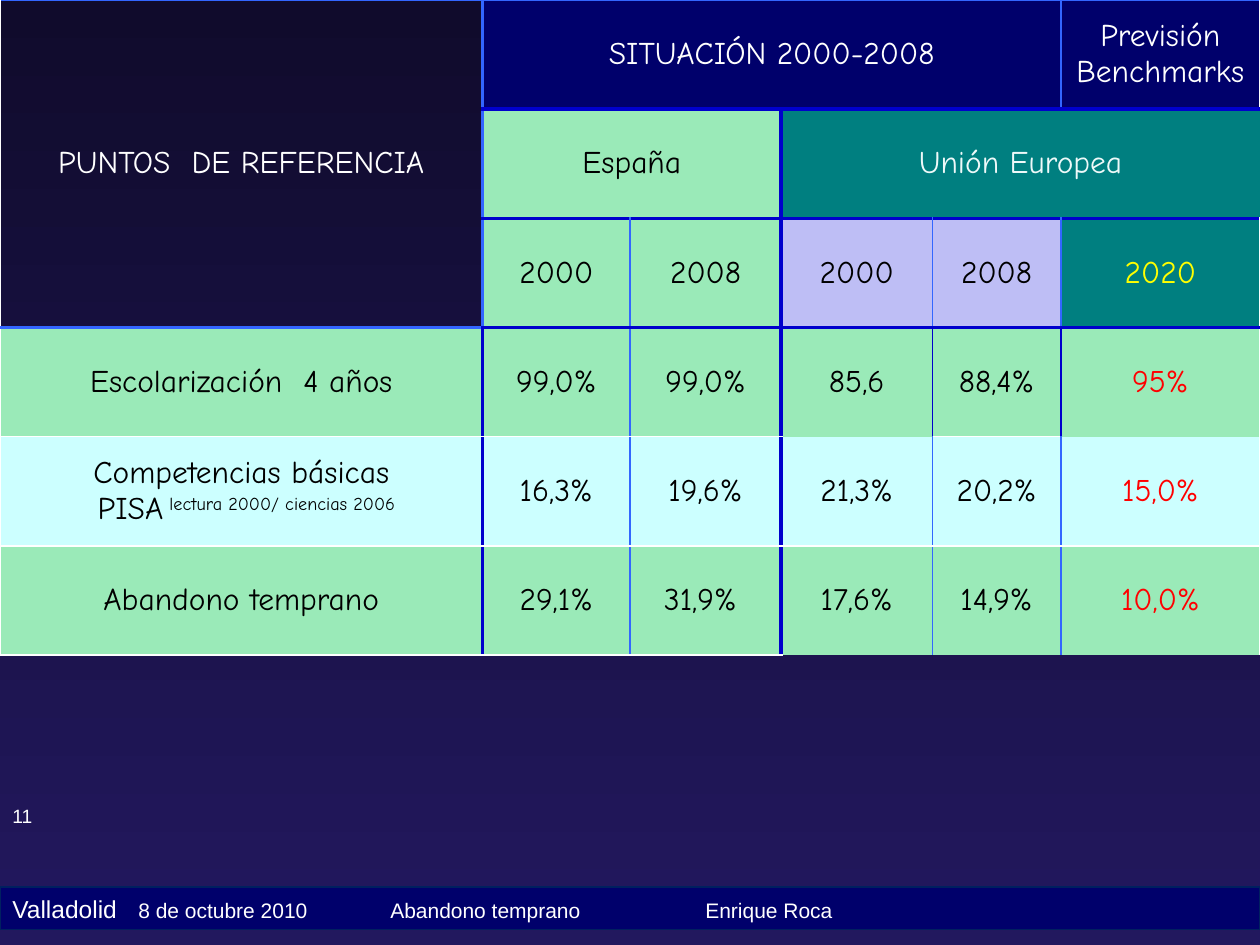
from lxml import etree
from pptx import Presentation, util as u
from pptx.dml.color import RGBColor
from pptx.enum import shapes, text
from pptx.oxml.ns import qn

NAVY, BLUE, SKY, WHITE, BLACK = "00006B", "0000CC", "3366FF", "FFFFFF", "000000"
GREEN, TEAL, LILAC, AQUA, RED = "9AEAB8", "007F80", "BEBEF5", "CCFFFF", "FF0000"


def color(value):
    return RGBColor.from_string(value)


def write(paragraph, words, size=18, font="Comic Neue", fill=WHITE, raised=False):
    run = paragraph.add_run()
    run.text = words
    run.font.size, run.font.name = u.Pt(size), font
    run.font.color.rgb = color(fill)
    if raised:
        run._r.get_or_add_rPr().set("baseline", "30000")


prs = Presentation()
prs.slide_width, prs.slide_height = u.Inches(10), u.Inches(7.5)
slide = prs.slides.add_slide(prs.slide_layouts[6])

# Background
backdrop = slide.background.fill
backdrop.gradient()
backdrop.gradient_angle = 270
for stop, shade in zip(backdrop.gradient_stops, ("100B2C", "22185E")):
    stop.color.rgb = color(shade)

# Page number
page = slide.shapes.add_textbox(u.Inches(0), u.Inches(6.33), u.Inches(0.47), u.Inches(0.29))
page.text_frame.word_wrap = True
write(page.text_frame.paragraphs[0], "11", size=11, font="Arial")

# Footer band
footer = slide.shapes.add_shape(shapes.MSO_SHAPE.RECTANGLE, u.Inches(0), u.Inches(7.04),
                                u.Inches(10), u.Inches(0.34))
footer.shadow.inherit = False
footer.fill.solid()
footer.fill.fore_color.rgb = color(NAVY)
footer.line.color.rgb = color("002060")
footer.line.width = u.Pt(0.75)
footer_line = footer.text_frame.paragraphs[0]
footer_line.alignment = text.PP_ALIGN.LEFT
write(footer_line, "Valladolid\t", size=14, font="Arial")
write(footer_line, "8 de octubre 2010 \t\tAbandono temprano \t\tEnrique Roca", size=12, font="Arial")

# Table contents: (row, column): (text, fill, text colour, rows spanned, columns spanned)
contents = {
    (0, 0): ("PUNTOS  DE REFERENCIA", None, WHITE, 3, 1),
    (0, 1): ("SITUACIÓN 2000-2008", NAVY, WHITE, 1, 4),
    (0, 5): ("Previsión\nBenchmarks", NAVY, WHITE, 1, 1),
    (1, 1): ("España", GREEN, BLACK, 1, 2),
    (1, 3): ("Unión Europea", TEAL, "EEF9F9", 1, 3),
}
years = zip(("2000", "2008", "2000", "2008", "2020"), (GREEN, GREEN, LILAC, LILAC, TEAL))
for col, (year, fill) in enumerate(years, 1):
    contents[2, col] = (year, fill, "FFFF00" if col == 5 else BLACK, 1, 1)
indicators = [
    (GREEN, "Escolarización  4 años", "99,0%", "99,0%", "85,6", "88,4%", "95%"),
    (AQUA, "Competencias básicas\n PISA", "16,3%", "19,6%", "21,3%", "20,2%", "15,0%"),
    (GREEN, "Abandono temprano", "29,1%", "31,9% ", "17,6%", "14,9%", "10,0%"),
]
for row, (fill, *values) in enumerate(indicators, 3):
    for col, value in enumerate(values):
        contents[row, col] = (value, fill, RED if col == 5 else BLACK, 1, 1)

# Rules: upright[row, column edge] and level[row edge, column] give colour and width
upright, level = {}, {}
for row in range(6):
    upright[row, 0] = upright[row, 6] = (WHITE, 1)
    upright[row, 1] = (SKY, 1.5) if row < 3 else (BLUE, 2.25)
    if row > 0:
        upright[row, 3] = (BLUE, 2.25)
    if row > 1:
        upright[row, 2] = (SKY, 1)
        upright[row, 4] = (BLUE, 1) if row == 3 else (SKY, 1)
    if row != 1:
        upright[row, 5] = (BLUE, 1) if row == 3 else (SKY, 1.5)
for col in range(6):
    level[0, col] = (SKY, 1.5)
    level[3, col] = (BLUE, 2.25) if col else (SKY, 1.5)
    level[5, col] = (WHITE, 1)
    if col > 0:
        level[1, col] = level[2, col] = (BLUE, 2.25)
    if col not in (3, 5):
        level[4, col] = (WHITE, 1)
    if col < 3:
        level[6, col] = (WHITE, 1)

# Table
table = slide.shapes.add_table(6, 6, u.Inches(0), u.Inches(0), u.Inches(10), u.Inches(5.2)).table
table.first_row = table.horz_banding = False
for column, width in zip(table.columns, (3.83, 1.17, 1.2, 1.2, 1.02, 1.58)):
    column.width = u.Inches(width)
for table_row in table.rows:
    table_row.height = u.Inches(5.2 / 6)

# Borders go before the fill in each cell
for row in range(6):
    for col in range(6):
        cell = table.cell(row, col)
        cell_format = cell._tc.get_or_add_tcPr()
        sides = {"a:lnL": upright.get((row, col)), "a:lnR": upright.get((row, col + 1)),
                 "a:lnT": level.get((row, col)), "a:lnB": level.get((row + 1, col))}
        for side, rule in sides.items():
            line = etree.SubElement(cell_format, qn(side))
            if rule:
                line.set("w", str(u.Pt(rule[1])))
                solid = etree.SubElement(line, qn("a:solidFill"))
                etree.SubElement(solid, qn("a:srgbClr")).set("val", rule[0])
            else:
                etree.SubElement(line, qn("a:noFill"))
        cell.fill.background()

for (row, col), (words, fill, ink, tall, wide) in contents.items():
    cell = table.cell(row, col)
    if tall * wide > 1:
        cell.merge(table.cell(row + tall - 1, col + wide - 1))
    if fill:
        cell.fill.solid()
        cell.fill.fore_color.rgb = color(fill)
    cell.vertical_anchor = text.MSO_ANCHOR.MIDDLE
    cell.margin_left = cell.margin_right = u.Inches(0.03)
    cell.margin_top = cell.margin_bottom = 0
    for index, part in enumerate(words.split("\n")):
        paragraph = cell.text_frame.add_paragraph() if index else cell.text_frame.paragraphs[0]
        paragraph.alignment = text.PP_ALIGN.CENTER
        if col == 0 and row > 2:
            layout = paragraph._p.get_or_add_pPr()
            layout.set("marL", str(u.Inches(0.08)))
            layout.set("indent", str(u.Inches(-0.08)))
        write(paragraph, part, fill=ink)

pisa = table.cell(4, 0).text_frame.paragraphs[1]
write(pisa, " lectura 2000/ ciencias 2006", fill=BLACK, raised=True)

prs.save("out.pptx")
